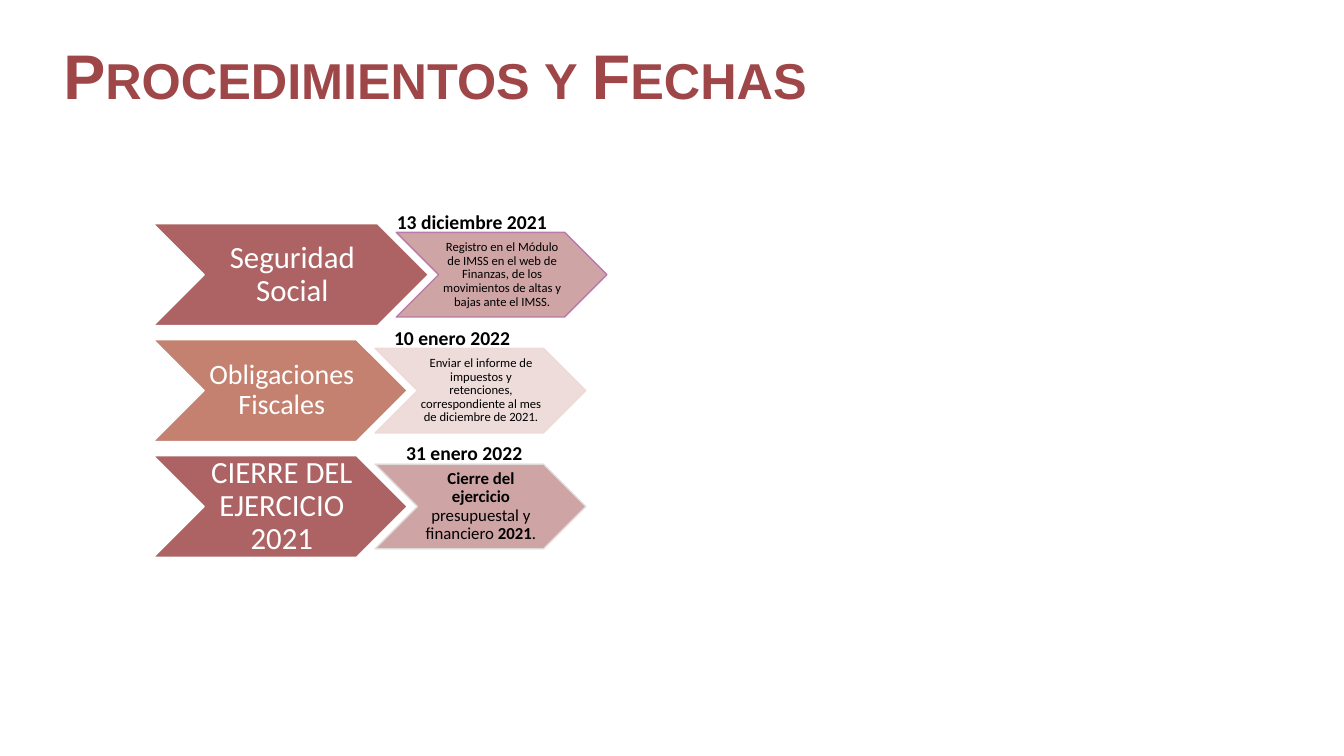
from pptx import Presentation
from pptx.dml.color import RGBColor
from pptx.enum.shapes import MSO_SHAPE
from pptx.enum.text import MSO_ANCHOR, PP_ALIGN
from pptx.oxml.ns import qn
from pptx.util import Inches, Pt
from lxml import etree

# Content
TITLE = "Procedimientos y Fechas"
HEX = {"title": "9F4648", "wine": "AD6364", "clay": "C48170", "blush": "EDD9D7",
       "plum": "B672A9", "grey": "E1E1E1", "white": "FFFFFF", "black": "000000"}
# Stage: name, size, width, fill
STAGES = [
    ("Seguridad Social", 22, 2.73, "wine"),
    ("Obligaciones Fiscales", 20, 2.52, "clay"),
    ("CIERRE DEL EJERCICIO 2021", 22, 2.52, "wine"),
]
# Detail: runs (text, bold), size, fill, opacity, line
DETAILS = [
    ([("Registro en el Módulo de IMSS en el web de Finanzas, de los "
       "movimientos de altas y bajas ante el IMSS.", False)], 9, "wine", 58, "plum"),
    ([("Enviar el informe de impuestos y retenciones, correspondiente al mes "
       "de diciembre de 2021.", False)], 9, "blush", 90, "blush"),
    ([("Cierre del ejercicio ", True), ("presupuestal y financiero ", False),
      ("2021", True), (".", False)], 12, "wine", 58, "grey"),
]
# Date: text, left, top, width
DATES = [
    ("13 diciembre 2021", 3.72, 2.03, 1.92),
    ("10 enero 2022", 3.65, 3.18, 1.67),
    ("31 enero 2022", 3.77, 4.33, 1.67),
]

# Layout
LEFT, TOP, STEP = 1.52, 2.22, 1.15
TALL, LOW, WIDE = 1.01, 0.84, 2.09
LAP = 0.32

deck = Presentation()
deck.slide_width, deck.slide_height = Inches(13.33), Inches(7.5)
slide = deck.slides.add_slide(deck.slide_layouts[6])


def tint(color, name):
    color.rgb = RGBColor.from_string(HEX[name])


def fade(fill, share):
    node = fill._xPr.find(qn("a:solidFill"))[0]
    etree.SubElement(node, qn("a:alpha"), val=str(share * 1000))


def write(frame, runs, size, color, face="Calibri", align=PP_ALIGN.CENTER):
    frame.word_wrap = True
    par = frame.paragraphs[0]
    par.alignment = align
    for text, bold in runs:
        run = par.add_run()
        run.text = text
        for key, value in {"name": face, "size": Pt(size), "bold": bold}.items():
            setattr(run.font, key, value)
        tint(run.font.color, color)
    return par


def chevron(box, runs, size, ink, fill, line, pad, alpha=(100, 100)):
    shape = slide.shapes.add_shape(MSO_SHAPE.CHEVRON, *map(Inches, box))
    shape.shadow.inherit = False
    shape.fill.solid()
    tint(shape.fill.fore_color, fill)
    shape.line.width = Pt(1)
    tint(shape.line.color, line)
    for part, share in zip((shape.fill, shape.line.fill), alpha):
        if share < 100:
            fade(part, share)
    frame = shape.text_frame
    form = {"margin_left": Inches(pad), "margin_right": 0,
            "margin_top": Inches(0.01), "margin_bottom": Inches(0.01),
            "vertical_anchor": MSO_ANCHOR.MIDDLE}
    for key, value in form.items():
        setattr(frame, key, value)
    write(frame, runs, size, ink).line_spacing = 0.9


def label(box, text, size, color, **form):
    frame = slide.shapes.add_textbox(*map(Inches, box)).text_frame
    return write(frame, [(text, True)], size, color, **form)


# Chevron rows
for row, (stage, detail) in enumerate(zip(STAGES, DETAILS)):
    name, size, width, fill = stage
    top = TOP + row * STEP
    chevron((LEFT, top, width, TALL), [(name, False)], size, "white", fill, "white", 0.03)
    runs, size, fill, share, line = detail
    chevron((LEFT + width - LAP, top + (TALL - LOW) / 2, WIDE, LOW),
            runs, size, "black", fill, line, 0.01, (share, 90))

# Dates
for text, left, top, width in DATES:
    label((left, top, width, 0.34), text, 14, "black")

# Title in small capitals
head = label((0.53, 0.31, 12.27, 0.86), TITLE, 45, "title", face="Arial", align=PP_ALIGN.LEFT)
head.runs[0].font._element.set("cap", "small")

deck.save("out.pptx")
